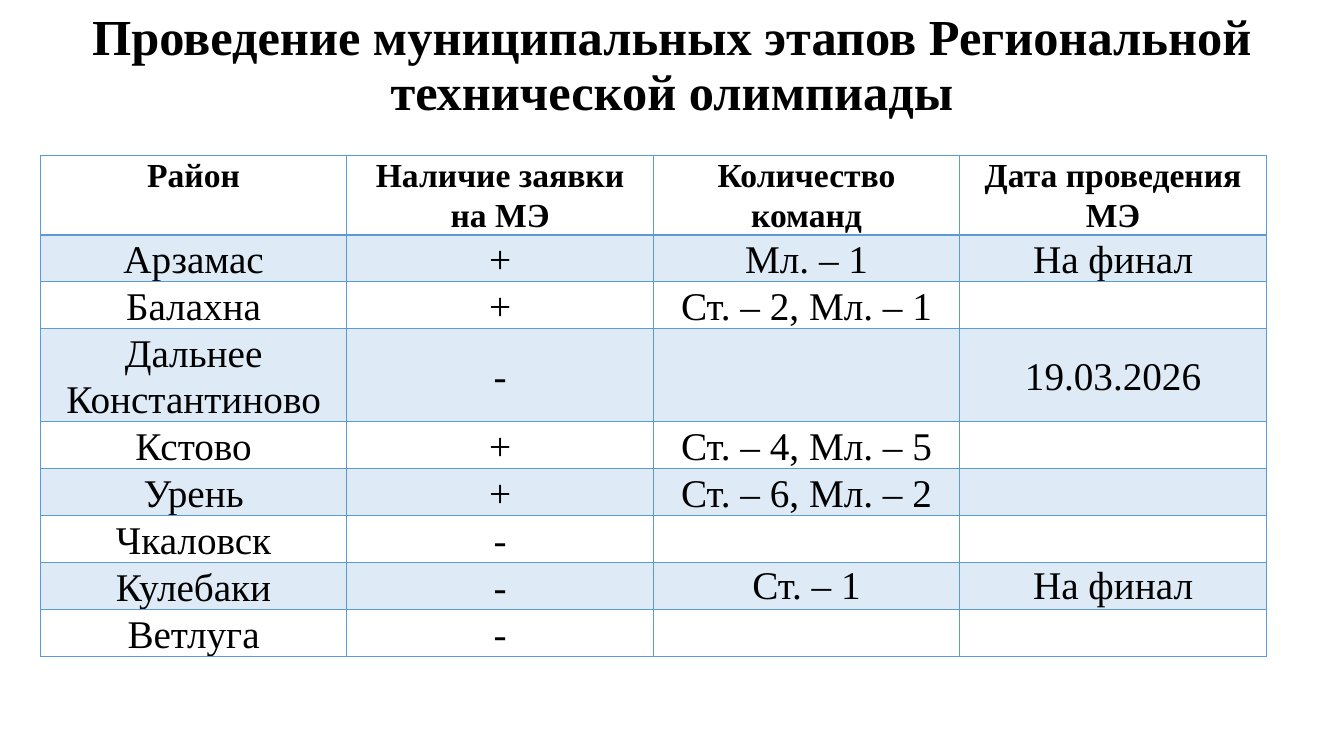
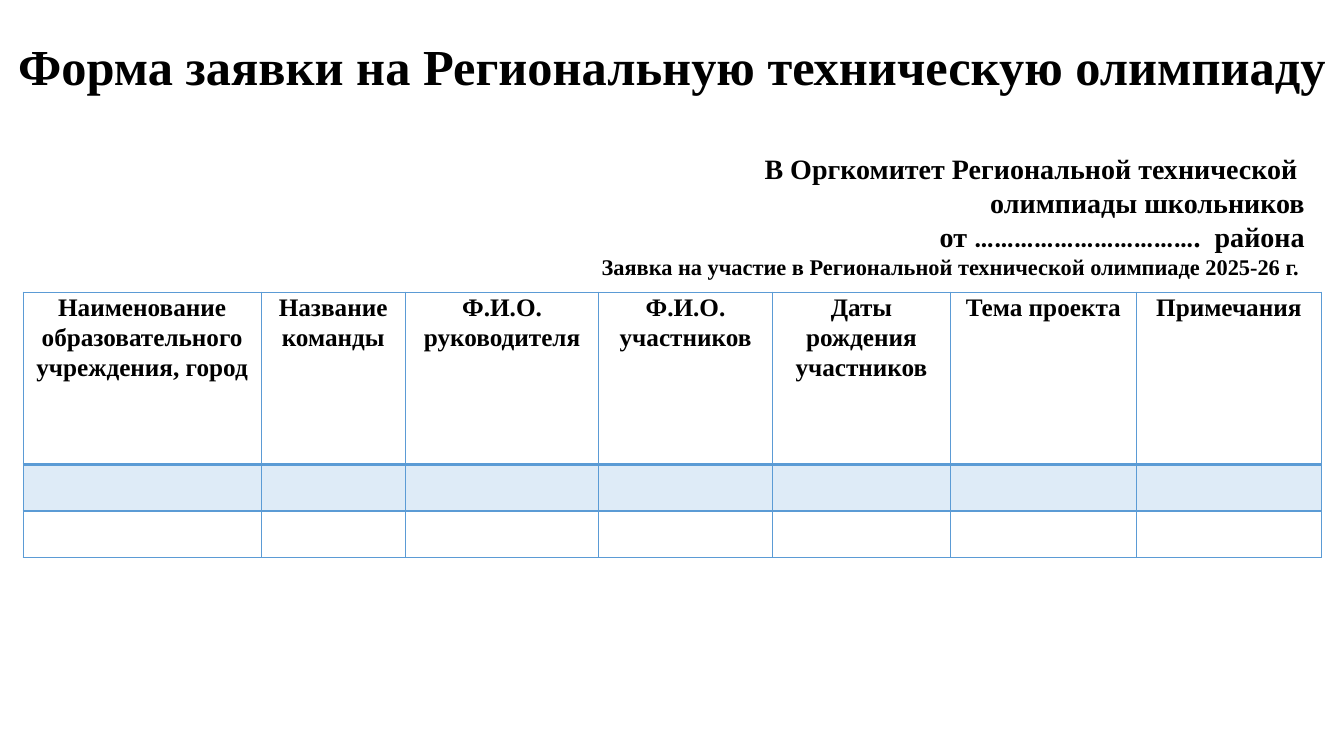
from lxml import etree
from pptx import Presentation
from pptx.dml.color import RGBColor
from pptx.enum import text
from pptx.oxml.ns import qn
from pptx.util import Inches, Pt

BLACK = RGBColor(0x00, 0x00, 0x00)
WHITE = RGBColor(0xFF, 0xFF, 0xFF)
BLUE = RGBColor(0x5B, 0x9B, 0xD5)
PALE_BLUE = RGBColor(0xDE, 0xEB, 0xF7)
FONT = "Times New Roman"
CENTER, RIGHT = text.PP_ALIGN.CENTER, text.PP_ALIGN.RIGHT
MIDDLE, TOP = text.MSO_ANCHOR.MIDDLE, text.MSO_ANCHOR.TOP

STAGES = {
    "title": "Проведение муниципальных этапов Региональной технической олимпиады",
    "title_height": 1.32,
    "at": (0.4, 1.54),
    "cols": [3.04] * 4,
    "heights": [0.48] + [0.46] * 8,
    "header_size": 24,
    "rows": [
        ("Район", "Наличие заявки на МЭ", "Количество команд", "Дата проведения МЭ"),
        ("Арзамас", "+", "Мл. – 1", "На финал"),
        ("Балахна", "+", "Ст. – 2, Мл. – 1", ""),
        ("Дальнее Константиново", "-", "", "19.03.2026"),
        ("Кстово", "+", "Ст. – 4, Мл. – 5", ""),
        ("Урень", "+", "Ст. – 6, Мл. – 2", ""),
        ("Чкаловск", "-", "", ""),
        ("Кулебаки", "-", "Ст. – 1", "На финал"),
        ("Ветлуга", "-", "", ""),
    ],
    "single_spaced": {(7, 2), (7, 3)},
}
FORM = {
    "title": "Форма заявки на Региональную техническую олимпиаду",
    "title_height": 1.37,
    "at": (0.23, 2.9),
    "cols": [2.36, 1.43, 1.92, 1.72, 1.77, 1.84, 1.84],
    "heights": [1.71, 0.46, 0.46],
    "header_size": 18,
    "rows": [
        ("Наименование образовательного учреждения, город", "Название команды",
         "Ф.И.О. руководителя", "Ф.И.О.\nучастников",
         "Даты рождения участников", "Тема проекта", "Примечания"),
        ("",) * 7,
        ("",) * 7,
    ],
    "single_spaced": set(),
}
# Each line: runs of (text, font), size, alignment
ADDRESS = [
    ([("В Оргкомитет Региональной технической ", FONT)], 20, RIGHT),
    ([("олимпиады школьников", FONT)], 20, RIGHT),
    ([("от ", FONT), ("……………………………", "Calibri"), (".  района", FONT)], 20, RIGHT),
    ([("Заявка на участие в Региональной технической олимпиаде 2025-26 г. ", FONT)],
     16, CENTER),
]


def style(p, size, bold=True, align=CENTER, spacing=None):
    p.alignment = align
    p.line_spacing = spacing
    p.font.name, p.font.size, p.font.bold = FONT, Pt(size), bold
    p.font.color.rgb = BLACK


def set_borders(cell, **widths):
    """Draw blue cell borders; widths in points for L, R, T and B."""
    tc_pr = cell._tc.get_or_add_tcPr()
    for side, width in widths.items():
        ln = etree.SubElement(tc_pr, qn(f"a:ln{side}"), w=str(Pt(width)))
        fill = etree.SubElement(ln, qn("a:solidFill"))
        etree.SubElement(fill, qn("a:srgbClr"), val=str(BLUE))


def add_title(slide, wording, height):
    title = slide.shapes.title
    title.left, title.top = Inches(0), Inches(0)
    title.width, title.height = Inches(13.33), Inches(height)
    tf = title.text_frame
    tf.text = wording
    tf.auto_size = text.MSO_AUTO_SIZE.NONE
    tf.vertical_anchor = MIDDLE
    style(tf.paragraphs[0], 36, spacing=0.9)


def fill_cell(cell, wording, header, header_size, spacing):
    cell.text = wording
    cell.vertical_anchor = TOP if header else MIDDLE
    cell.margin_left = cell.margin_right = Inches(0.07)
    cell.margin_top = Inches(0 if header else 0.01)
    cell.margin_bottom = Inches(0)
    for p in cell.text_frame.paragraphs:
        style(p, header_size if header else 28, header, spacing=spacing)


def add_grid(slide, data):
    cols, heights, rows = data["cols"], data["heights"], data["rows"]
    left, top = data["at"]
    table = slide.shapes.add_table(
        len(rows), len(cols), Inches(left), Inches(top),
        Inches(sum(cols)), Inches(sum(heights))).table
    table.horz_banding = False
    for column, width in zip(table.columns, cols):
        column.width = Inches(width)
    for i, row in enumerate(rows):
        table.rows[i].height = Inches(heights[i])
        for j, wording in enumerate(row):
            cell = table.cell(i, j)
            set_borders(cell, L=1, R=1, T=2 if i == 1 else 1, B=2 if i == 0 else 1)
            cell.fill.solid()
            cell.fill.fore_color.rgb = PALE_BLUE if i % 2 else WHITE
            if wording:
                spacing = 1.07 if i == 0 else 1.06
                if (i, j) in data["single_spaced"]:
                    spacing = 1.0
                fill_cell(cell, wording, i == 0, data["header_size"], spacing)


def add_address(slide):
    box = slide.shapes.add_textbox(Inches(5.31), Inches(1.45), Inches(7.73), Inches(1.38))
    tf = box.text_frame
    tf.word_wrap = False
    tf.auto_size = text.MSO_AUTO_SIZE.SHAPE_TO_FIT_TEXT
    tf.vertical_anchor = MIDDLE
    for i, (runs, size, align) in enumerate(ADDRESS):
        p = tf.add_paragraph() if i else tf.paragraphs[0]
        style(p, size, align=align)
        for wording, font in runs:
            r = p.add_run()
            r.text = wording
            if font != FONT:
                r.font.name = font


def main():
    prs = Presentation()
    prs.slide_width, prs.slide_height = Inches(13.33), Inches(7.5)
    for data in (STAGES, FORM):
        slide = prs.slides.add_slide(prs.slide_layouts[5])
        add_title(slide, data["title"], data["title_height"])
        add_grid(slide, data)
    add_address(slide)
    prs.save("out.pptx")


if __name__ == "__main__":
    main()
